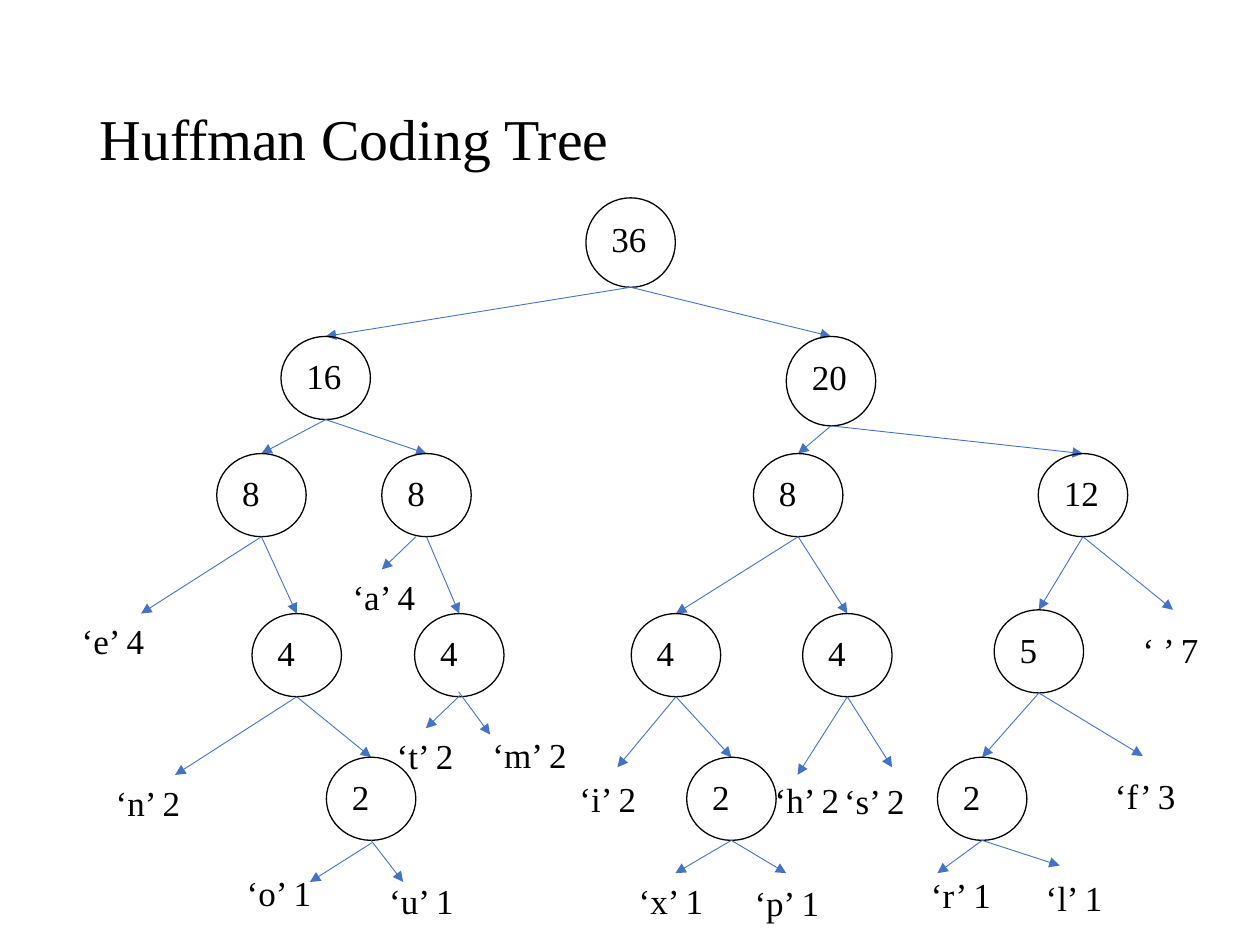
from dataclasses import dataclass

from lxml import etree
from pptx import Presentation
from pptx.dml.color import RGBColor
from pptx.enum import shapes, text
from pptx.oxml.ns import qn
from pptx.util import Inches, Pt

BLACK = RGBColor(0x00, 0x00, 0x00)
BLUE = RGBColor(0x44, 0x72, 0xC4)
FONT = "Times New Roman"
NODE_WIDTH = 0.71
LABEL_HEIGHT = 0.44


@dataclass
class Node:
    """Inner node: weight and top left corner, relative to the tree's box."""
    weight: int
    left: float
    top: float
    children: tuple
    height: float = 0.66

    @property
    def tip(self):
        return self.left + NODE_WIDTH / 2, self.top

    @property
    def foot(self):
        return self.left + NODE_WIDTH / 2, self.top + self.height


@dataclass
class Leaf:
    """Letter and count; tip is the arrow's end, start replaces the parent's foot."""
    label: str
    left: float
    top: float
    width: float
    tip: tuple
    start: tuple = None


LEFT_BRANCH = Node(16, 1.73, 1.17, (
    Node(8, 1.22, 2.1, (
        Leaf("‘e’ 4", 0.05, 3.37, 0.71, (0.62, 3.37)),
        Node(4, 1.5, 3.37, (
            Leaf("‘n’ 2", 0.32, 4.65, 0.71, (0.89, 4.65)),
            Node(2, 2.09, 4.51, (
                Leaf("‘o’ 1", 1.36, 5.37, 0.72, (1.96, 5.5), (2.45, 5.19)),
                Leaf("‘u’ 1", 2.49, 5.43, 0.74, (2.7, 5.5)))))))),
    Node(8, 2.53, 2.1, (
        Leaf("‘a’ 4", 2.2, 3.02, 0.7, (2.53, 3.02), (2.8, 2.76)),
        Node(4, 2.79, 3.37, (
            Leaf("‘t’ 2", 2.55, 4.28, 0.65, (2.88, 4.28), (3.15, 4.02)),
            Leaf("‘m’ 2", 3.31, 4.27, 0.84, (3.39, 4.33), (3.14, 3.99))))))))

RIGHT_BRANCH = Node(20, 5.74, 1.17, (
    Node(8, 5.48, 2.1, (
        Node(4, 4.51, 3.37, (
            Leaf("‘i’ 2", 4, 4.62, 0.65, (4.4, 4.59)),
            Node(2, 4.95, 4.51, (
                Leaf("‘x’ 1", 4.47, 5.43, 0.72, (4.86, 5.43)),
                Leaf("‘p’ 1", 5.39, 5.45, 0.72, (5.74, 5.43)))))),
        Node(4, 5.87, 3.37, (
            Leaf("‘h’ 2", 5.55, 4.63, 0.72, (5.83, 4.65)),
            Leaf("‘s’ 2", 6.1, 4.64, 0.69, (6.58, 4.59)))))),
    Node(12, 7.74, 2.1, (
        Node(5, 7.39, 3.34, (
            Node(2, 6.94, 4.51, (
                Leaf("‘r’ 1", 6.79, 5.38, 0.68, (6.94, 5.43)),
                Leaf("‘l’ 1", 7.7, 5.41, 0.65, (7.91, 5.37)))),
            Leaf("‘f’ 3", 8.25, 4.6, 0.69, (8.57, 4.5)))),
        Leaf("‘ ’ 7", 8.47, 3.44, 0.65, (8.81, 3.34))))), height=0.71)

ROOT = Node(36, 4.15, 0.07, (LEFT_BRANCH, RIGHT_BRANCH), height=0.71)


def write_text(shape, words, size=20, anchor=text.MSO_ANCHOR.TOP, wrap=True,
               line_spacing=None):
    frame = shape.text_frame
    frame.word_wrap = wrap
    frame.vertical_anchor = anchor
    paragraph = frame.paragraphs[0]
    paragraph.alignment = text.PP_ALIGN.LEFT
    paragraph.line_spacing = line_spacing
    run = paragraph.add_run()
    run.text = words
    run.font.name = FONT
    run.font.size = Pt(size)
    run.font.color.rgb = BLACK


def add_title(slide, left, top, width, height):
    title = slide.shapes.title
    title.left, title.top = Inches(left), Inches(top)
    title.width, title.height = Inches(width), Inches(height)
    write_text(title, "Huffman Coding Tree", size=33,
               anchor=text.MSO_ANCHOR.MIDDLE, line_spacing=0.9)


def add_arrow(slide, start, end):
    arrow = slide.shapes.add_connector(
        shapes.MSO_CONNECTOR.STRAIGHT, *map(Inches, (*start, *end)))
    arrow.line.color.rgb = BLUE
    arrow.line.width = Pt(0.5)
    line = arrow.line._get_or_add_ln()
    etree.SubElement(line, qn("a:tailEnd"), type="triangle")
    etree.SubElement(arrow._element.spPr, qn("a:effectLst"))


def add_circle(slide, node, left, top):
    circle = slide.shapes.add_shape(
        shapes.MSO_SHAPE.OVAL, Inches(left), Inches(top),
        Inches(NODE_WIDTH), Inches(node.height))
    circle.shadow.inherit = False
    circle.fill.background()
    circle.line.color.rgb = BLACK
    circle.line.width = Pt(0.75)
    write_text(circle, str(node.weight))


def add_label(slide, leaf, left, top):
    label = slide.shapes.add_textbox(
        Inches(left), Inches(top), Inches(leaf.width), Inches(LABEL_HEIGHT))
    write_text(label, leaf.label, wrap=False)
    label.text_frame.auto_size = text.MSO_AUTO_SIZE.SHAPE_TO_FIT_TEXT


def add_tree(slide, node, left, top):
    """Draw a node and all below it in the box whose corner is (left, top)."""
    def place(point):
        return left + point[0], top + point[1]

    corner = place((node.left, node.top))
    if isinstance(node, Leaf):
        add_label(slide, node, *corner)
        return
    add_circle(slide, node, *corner)
    for child in node.children:
        start = getattr(child, "start", None) or node.foot
        add_arrow(slide, place(start), place(child.tip))
        add_tree(slide, child, left, top)


def main():
    presentation = Presentation()
    presentation.slide_width = Inches(10)
    presentation.slide_height = Inches(7.5)
    slide = presentation.slides.add_slide(presentation.slide_layouts[5])
    add_title(slide, 0.69, 0.4, 8.62, 1.45)
    add_tree(slide, ROOT, 0.5, 1.5)
    presentation.save("out.pptx")


if __name__ == "__main__":
    main()
